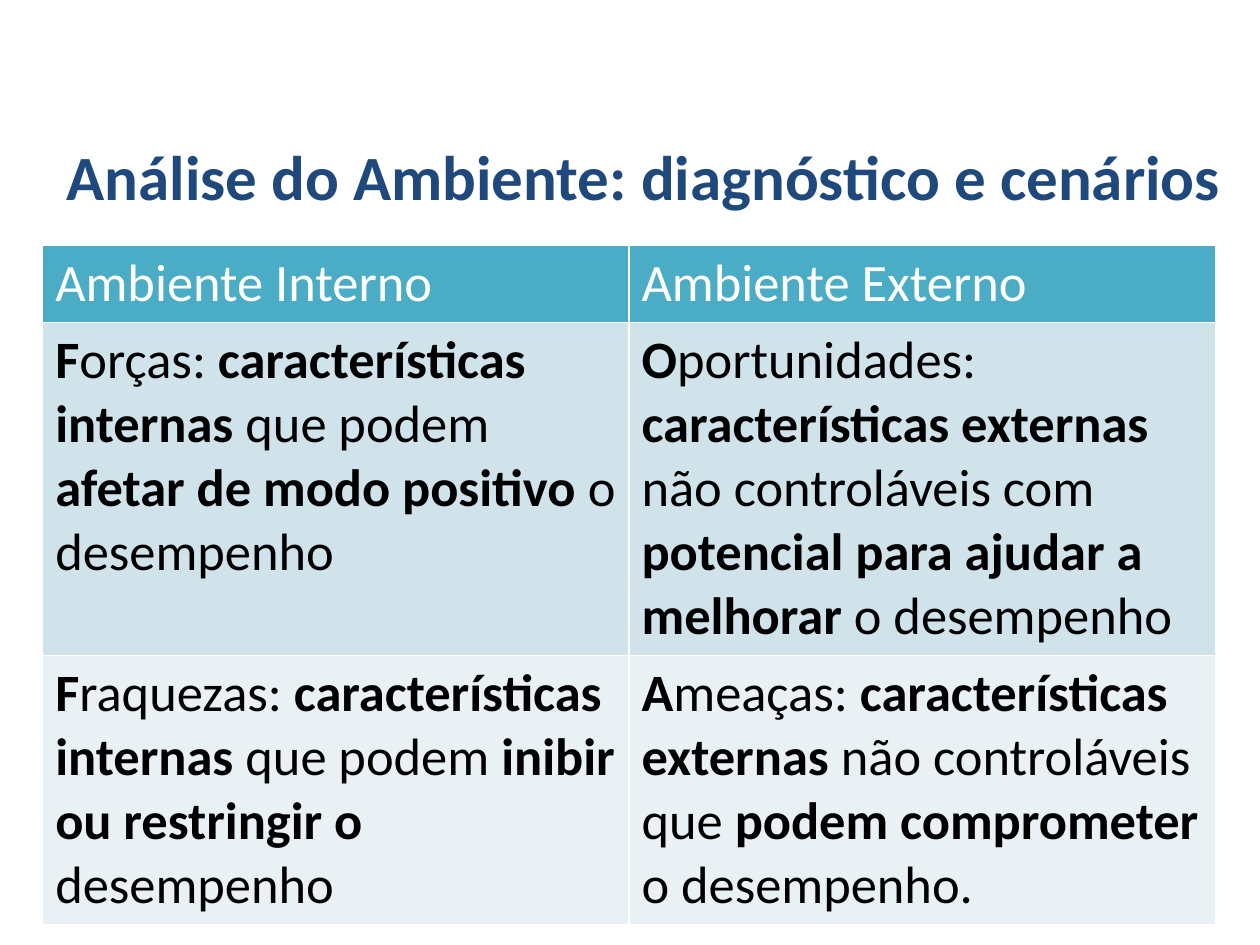
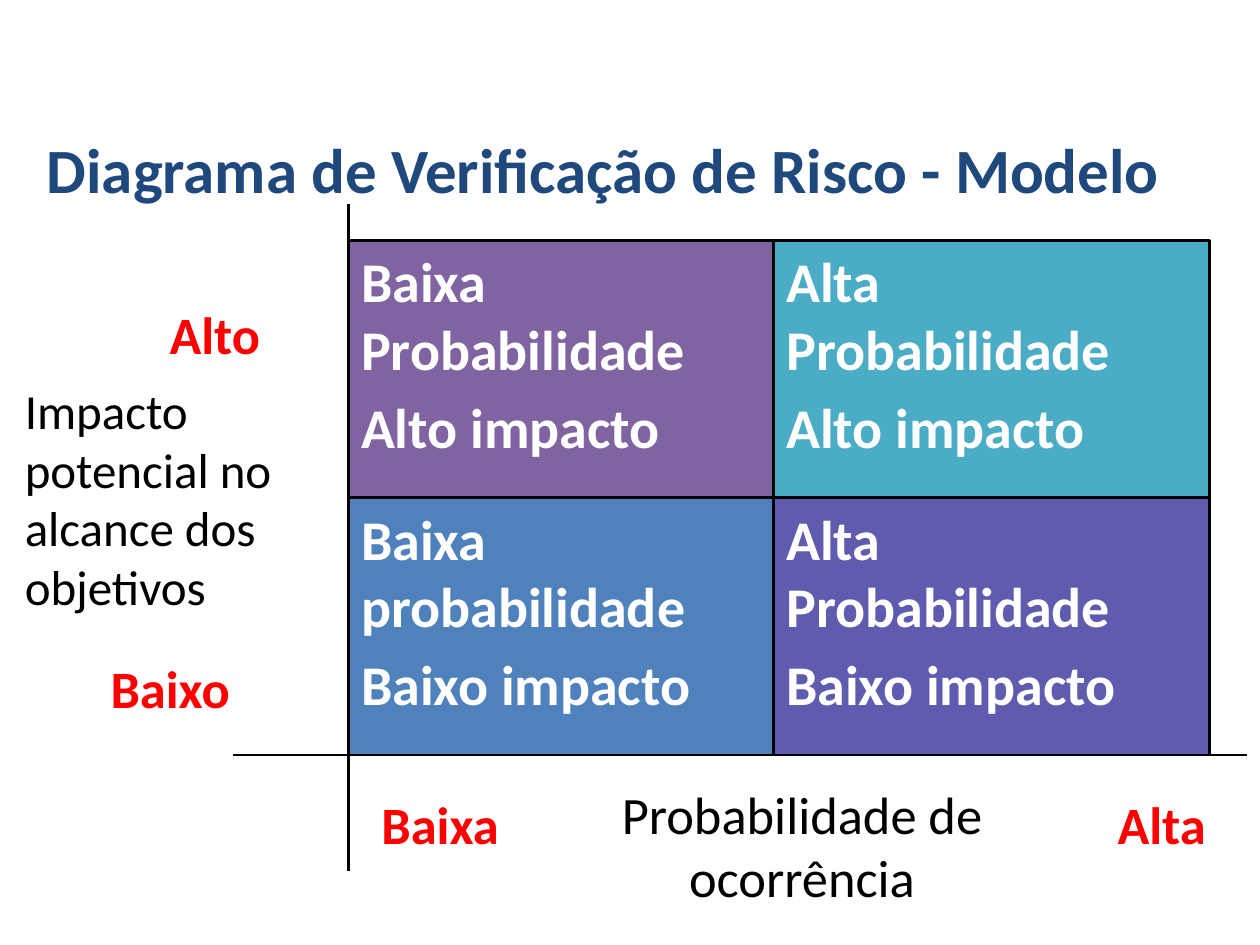
from dataclasses import dataclass
from itertools import product

from lxml import etree
from pptx import Presentation
from pptx.dml.color import RGBColor
from pptx.enum.shapes import MSO_CONNECTOR, MSO_SHAPE
from pptx.enum.text import MSO_ANCHOR, MSO_AUTO_SIZE, PP_ALIGN
from pptx.oxml.ns import qn
from pptx.util import Cm, Pt

STRAIGHT = MSO_CONNECTOR.STRAIGHT
RECTANGLE = MSO_SHAPE.RECTANGLE
TOP, MIDDLE = MSO_ANCHOR.TOP, MSO_ANCHOR.MIDDLE
FIXED, GROW = MSO_AUTO_SIZE.NONE, MSO_AUTO_SIZE.SHAPE_TO_FIT_TEXT
LEFT, CENTER, JUSTIFY = PP_ALIGN.LEFT, PP_ALIGN.CENTER, PP_ALIGN.JUSTIFY
TITLE_ONLY = 5


@dataclass(frozen=True)
class Theme:
    font: str = "Calibri"
    title: str = "1F497D"
    text: str = "000000"
    light: str = "FFFFFF"
    scale: str = "FF0000"
    line: str = "000000"
    header: str = "4BACC6"
    bands: tuple = ("D0E3EA", "E9F1F5")
    quadrants: tuple = (("8064A2", "4BACC6"), ("4F81BD", "5F5BAE"))
    title_size: int = 36
    quadrant_size: int = 32
    body_size: int = 30
    axis_size: int = 28
    line_width: float = 1.5


THEME = Theme()

SWOT_ROWS = (
    ("Ambiente Interno", "Ambiente Externo"),
    (
        "**F**orças: **características internas** que podem "
        "**afetar de modo positivo **o desempenho",
        "**O**portunidades: **características externas** não controláveis com "
        "**potencial para ajudar a melhorar **o desempenho",
    ),
    (
        "**F**raquezas: **características internas** que podem "
        "**inibir ou restringir o **desempenho",
        "**A**meaças: **características externas** não controláveis que "
        "**podem comprometer **o desempenho.",
    ),
)
SWOT_HEIGHTS = (1.5, 6.45, 5.21)

RISK_QUADRANTS = (
    (("Baixa Probabilidade", "Alto impacto"), ("Alta Probabilidade", "Alto impacto")),
    (("Baixa probabilidade", "Baixo impacto"), ("Alta Probabilidade", "Baixo impacto")),
)


def set_values(target, values):
    for name, value in values.items():
        setattr(target, name, value)


def set_font(font, size, color, bold=False):
    set_values(font, {"name": THEME.font, "size": Pt(size), "bold": bold})
    font.color.rgb = RGBColor.from_string(color)


def set_fill(target, color):
    target.fill.solid()
    target.fill.fore_color.rgb = RGBColor.from_string(color)


def set_line(shape):
    shape.line.color.rgb = RGBColor.from_string(THEME.line)
    shape.line.width = Pt(THEME.line_width)


def write_paragraphs(frame, texts, size, color, bold=False, alignment=LEFT):
    for index, text in enumerate(texts):
        paragraph = frame.add_paragraph() if index else frame.paragraphs[0]
        paragraph.alignment = alignment
        if index:
            paragraph.space_before = Pt(size * 0.2)
        for part, piece in enumerate(text.split("**")):
            if piece:
                run = paragraph.add_run()
                run.text = piece
                set_font(run.font, size, color, bold or part % 2 == 1)


def place(shape, box):
    set_values(shape, dict(zip(("left", "top", "width", "height"), map(Cm, box))))


def add_titled_slide(presentation, title, box, anchor, alignment):
    slide = presentation.slides.add_slide(presentation.slide_layouts[TITLE_ONLY])
    shape = slide.shapes.title
    place(shape, box)
    frame = shape.text_frame
    set_values(frame, {"word_wrap": True, "auto_size": FIXED, "vertical_anchor": anchor})
    write_paragraphs(frame, [title], THEME.title_size, THEME.title, True, alignment)
    return slide


def add_label(slide, text, box, size, color, bold=False, alignment=LEFT):
    frame = slide.shapes.add_textbox(*map(Cm, box)).text_frame
    set_values(frame, {"word_wrap": True, "auto_size": GROW, "vertical_anchor": TOP})
    write_paragraphs(frame, [text], size, color, bold, alignment)


def add_line(shapes, start, end):
    line = shapes.add_connector(STRAIGHT, *map(Cm, (*start, *end)))
    set_line(line)
    etree.SubElement(line._element.spPr, qn("a:effectLst"))


def add_swot_table(slide, left, top, width):
    box = (left, top, width, sum(SWOT_HEIGHTS))
    columns = len(SWOT_ROWS[0])
    table = slide.shapes.add_table(len(SWOT_ROWS), columns, *map(Cm, box)).table
    for column in table.columns:
        column.width = Cm(width / columns)
    fills = (THEME.header, *THEME.bands)
    for row_index, (texts, height, fill) in enumerate(zip(SWOT_ROWS, SWOT_HEIGHTS, fills)):
        table.rows[row_index].height = Cm(height)
        color = THEME.text if row_index else THEME.light
        for column_index, text in enumerate(texts):
            cell = table.cell(row_index, column_index)
            set_fill(cell, fill)
            write_paragraphs(cell.text_frame, [text], THEME.body_size, color)


def add_quadrant(shapes, texts, box, fill):
    shape = shapes.add_shape(RECTANGLE, *map(Cm, box))
    shape.shadow.inherit = False
    set_fill(shape, fill)
    set_line(shape)
    frame = shape.text_frame
    set_values(frame, {"word_wrap": True, "vertical_anchor": TOP})
    write_paragraphs(frame, texts, THEME.quadrant_size, THEME.light, True)


def add_risk_matrix(slide, left, top, widths, height):
    shapes = slide.shapes.add_group_shape().shapes
    row_height = height / 2
    column_edges = (left, left + widths[0], left + sum(widths))
    row_edges = (top, top + row_height, top + height)
    for row, column in product((1, 0), repeat=2):
        box = (column_edges[column], row_edges[row], widths[column], row_height)
        add_quadrant(shapes, RISK_QUADRANTS[row][column], box, THEME.quadrants[row][column])
    for y in row_edges:
        add_line(shapes, (left, y), (column_edges[-1], y))
    for x in column_edges:
        add_line(shapes, (x, top), (x, row_edges[-1]))


def add_risk_axes(slide, left, top, width, height):
    right, bottom = left + width, top + height
    overhang = 2.34
    add_line(slide.shapes, (left, bottom), (left, bottom + overhang))
    add_line(slide.shapes, (left, bottom), (left - overhang, bottom))
    add_line(slide.shapes, (left, top - 0.74), (left, top + 0.43))
    add_line(slide.shapes, (right + 0.74, bottom), (right, bottom))

    scale_labels = (
        ("Alto", (left - 3.86, top + 1.12, 2.54, 1.55)),
        ("Baixo", (left - 5.05, bottom - 2.11, 4.42, 1.55)),
        ("Alta", (right - 2.11, bottom + 0.63, 2.34, 1.55)),
        ("Baixa", (left + 0.41, bottom + 0.63, 3.18, 1.55)),
    )
    for text, box in scale_labels:
        add_label(slide, text, box, THEME.body_size, THEME.scale, True)
    add_label(slide, "Impacto potencial no alcance dos objetivos",
              (left - 6.78, top + 2.69, 6.1, 5.05), THEME.axis_size, THEME.text)
    add_label(slide, "Probabilidade de ocorrência",
              (left + 5.01, bottom + 0.43, 8.26, 2.82), THEME.body_size, THEME.text,
              alignment=CENTER)


def build_swot_slide(presentation):
    slide = add_titled_slide(presentation, "Análise do Ambiente: diagnóstico e cenários",
                             (1.09, 2.34, 24.31, 2.39), MIDDLE, LEFT)
    add_swot_table(slide, 0.86, 4.95, 23.64)


def build_risk_slide(presentation):
    slide = add_titled_slide(presentation, "Diagrama de Verificação de Risco - Modelo",
                             (0.69, 2.51, 24.64, 2.01), TOP, JUSTIFY)
    left, top, widths, height = 7.03, 4.85, (8.57, 8.79), 10.37
    add_risk_matrix(slide, left, top, widths, height)
    add_risk_axes(slide, left, top, sum(widths), height)


def main():
    presentation = Presentation()
    set_values(presentation, {"slide_width": Cm(25.4), "slide_height": Cm(19.05)})
    build_swot_slide(presentation)
    build_risk_slide(presentation)
    presentation.save("out.pptx")


if __name__ == "__main__":
    main()
